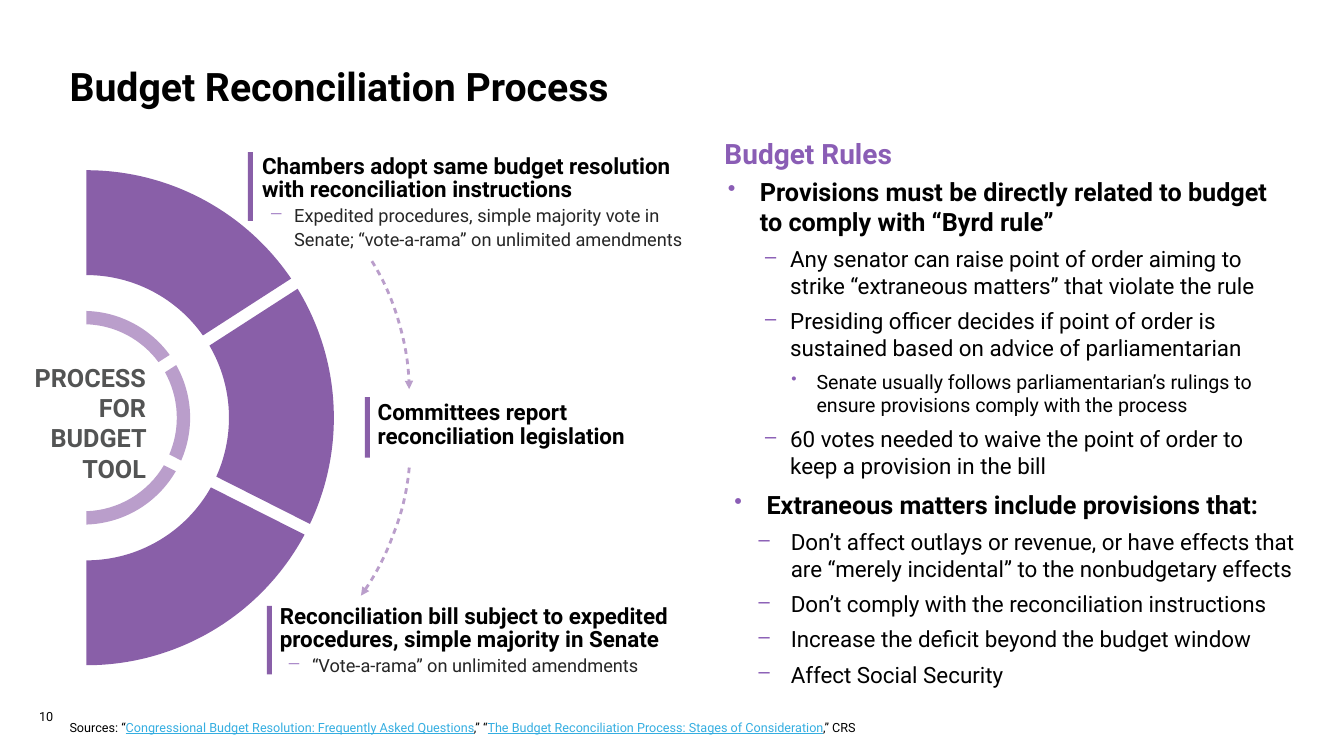
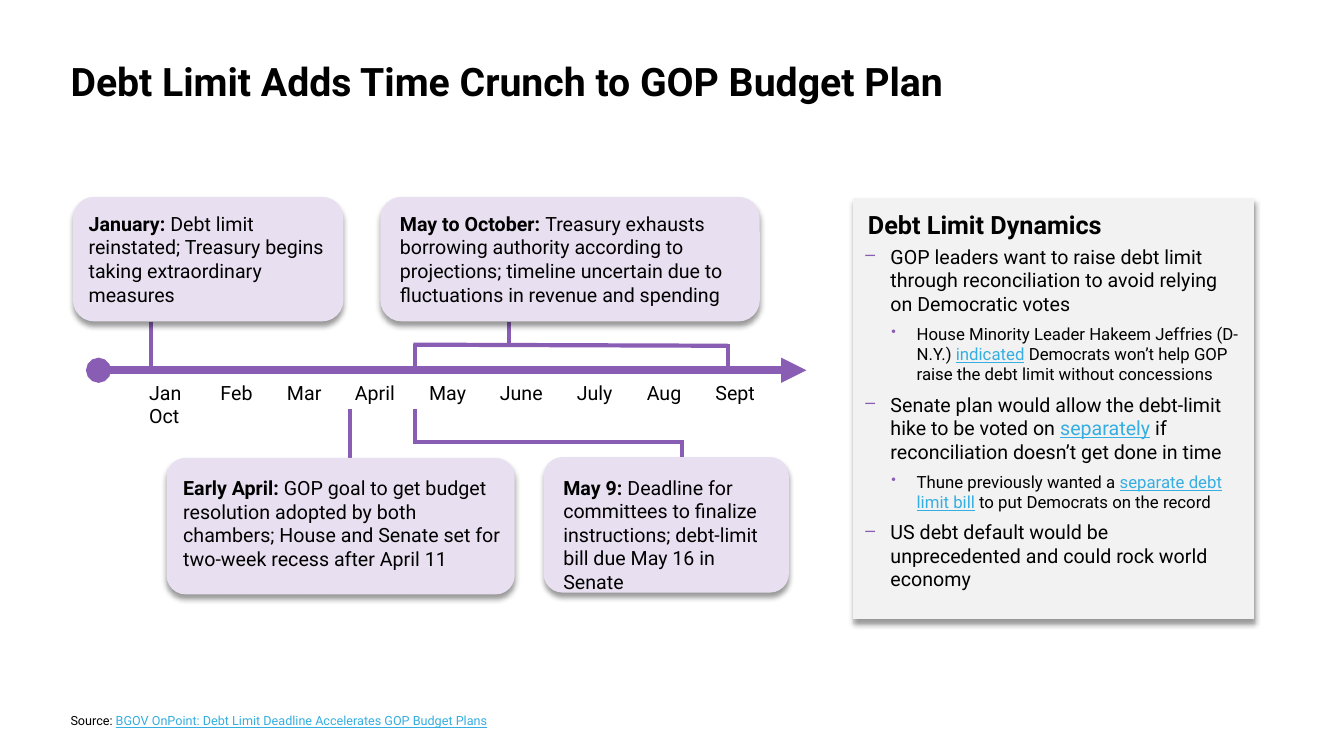
"""Build two budget slides: the reconciliation process and the debt limit timeline."""
import math
from dataclasses import dataclass
from typing import NamedTuple

from lxml import etree
from pptx import Presentation
from pptx import util as u
from pptx.dml.color import RGBColor
from pptx.enum import shapes, text
from pptx.oxml.ns import qn


@dataclass(frozen=True)
class Theme:
    font: str = "Roboto"
    ink: str = "000000"
    soft_ink: str = "262626"
    gray: str = "535454"
    accent: str = "8A5DB5"
    ring: str = "895FA8"
    light_ring: str = "BA9ECB"
    card: str = "E8DFF0"
    panel: str = "F2F2F2"
    link: str = "35AEE1"
    title: float = 28
    heading: float = 20
    lead: float = 18
    body: float = 16
    small: float = 14
    detail: float = 13
    minor: float = 12
    note: float = 9


THEME = Theme()
NO_INSETS = (0, 0, 0, 0)
SLIM_INSETS = (2.2, 2.2, 2.2, 2.2)
FULL_INSETS = (7.2, 3.6, 7.2, 3.6)


class Run(NamedTuple):
    text: str
    link: bool = False
    bold: bool = False


class Box(NamedTuple):
    left: float
    top: float
    width: float
    height: float


class Bullet(NamedTuple):
    char: str
    left: float
    hang: float
    percent: int = 100


class Callout(NamedTuple):
    bar: Box
    area: Box
    heading: str
    detail: str = ""


class Card(NamedTuple):
    outline: Box
    area: Box
    when: str
    event: str
    corner: float = 0.167


class Ring(NamedTuple):
    x: float
    y: float
    outer: float
    inner: float
    end_gap: float
    color: str


class Arrow(NamedTuple):
    start: tuple
    curves: list
    rotation: float = 0


RULE_LEAD = Bullet("•", 23, -23, 90)
RULE_ITEM = Bullet("–", 44.6, -18, 90)
RULE_NOTE = Bullet("•", 63.4, -18, 80)
MATTER_ITEM = Bullet("–", 40.3, -23, 90)
CALLOUT_ITEM = Bullet("−", 23, -18)
PANEL_ITEM = Bullet("–", 31.7, -18, 90)
PANEL_NOTE = Bullet("•", 50.4, -18, 80)

RINGS = [
    Ring(61.7, 298.4, 176.8, 101.9, 0, THEME.ring),
    Ring(59.5, 298.4, 76.3, 66.8, 2.2, THEME.light_ring),
]
RING_CUTS = [-90, -32.8, 26.8, 90]
HALF_GAP = 4.3

CALLOUTS = [
    Callout(Box(177.1, 108.7, 3.6, 49), Box(185, 108.3, 306.7, 90),
            "Chambers adopt same budget resolution with reconciliation instructions",
            "Expedited procedures, simple majority vote in Senate; “vote-a-rama” on unlimited amendments"),
    Callout(Box(260.6, 283.7, 3.6, 43.2), Box(267.6, 284.4, 205.2, 39),
            "Committees report reconciliation legislation"),
    Callout(Box(190.6, 432.7, 3.6, 49), Box(197.7, 429.8, 290.9, 55),
            "Reconciliation bill subject to expedited procedures, simple majority in Senate",
            "“Vote-a-rama” on unlimited amendments"),
]
ARROWS = [
    Arrow((260.2, 188.5), [((270.4, 201), (278.7, 215.2), (284.8, 229.7)),
                           ((291, 244.2), (295.8, 260.3), (297.8, 276))], 7),
    Arrow((292.3, 334), [((290.9, 349.9), (287.3, 365.8), (281.5, 380.2)),
                         ((275.8, 396), (267.8, 411.8), (257.8, 425.5))]),
]
RULES = [
    (RULE_LEAD, THEME.lead, "Provisions must be directly related to budget to comply with “Byrd rule”"),
    (RULE_ITEM, THEME.body, "Any senator can raise point of order aiming to strike “extraneous matters” that violate the rule"),
    (RULE_ITEM, THEME.body, "Presiding officer decides if point of order is sustained based on advice of parliamentarian"),
    (RULE_NOTE, THEME.small, "Senate usually follows parliamentarian’s rulings to ensure provisions comply with the process"),
    (RULE_ITEM, THEME.body, "60 votes needed to waive the point of order to keep a provision in the bill"),
]
MATTERS = [
    (RULE_LEAD, THEME.lead, "Extraneous matters include provisions that:"),
    (MATTER_ITEM, THEME.body, "Don’t affect outlays or revenue, or have effects that are “merely incidental” to the nonbudgetary effects"),
    (MATTER_ITEM, THEME.body, "Don’t comply with the reconciliation instructions"),
    (MATTER_ITEM, THEME.body, "Increase the deficit beyond the budget window"),
    (MATTER_ITEM, THEME.body, "Affect Social Security"),
]
CARDS = [
    Card(Box(52.6, 141.1, 192.2, 88), Box(56.2, 147.8, 186.5, 75), "January: ",
         "Debt limit reinstated; Treasury begins taking extraordinary measures"),
    Card(Box(272.2, 141.1, 270, 88), Box(278.6, 147.8, 257, 75), "May to October: ",
         "Treasury exhausts borrowing authority according to projections; "
         "timeline uncertain due to fluctuations in revenue and spending"),
    Card(Box(119.5, 327.6, 247.7, 96.5), Box(123.8, 336.7, 244.1, 75), "Early April: ",
         "GOP goal to get budget resolution adopted by both chambers; "
         "House and Senate set for two-week recess after April 11", 0.136),
    Card(Box(388.8, 327, 174.2, 95.8), Box(395.3, 336.2, 167.8, 75), "May 9: ",
         "Deadline for committees to finalize instructions; debt-limit bill due May 16 in Senate", 0.136),
]
AXIS_Y = 264.5
BRANCHES = [
    (108, 229.7, 108, AXIS_Y), (249.8, 292.3, 249.8, 327.6),
    (363.6, 229.7, 363.6, 247), (519.8, 247, 295.2, 246.2),
    (296.6, 245.5, 296.6, 262.8), (519.8, 245.5, 519.8, 262.8),
    (296.6, 292.3, 296.6, 316), (488.9, 316, 295.2, 316), (487.4, 316, 487.4, 339),
]
MONTHS = "Jan\tFeb\tMar\tApril\tMay\tJune\tJuly\tAug\tSept\tOct"
MONTH_STOPS = (51, 98.5, 147, 200, 250.5, 305.5, 355.5, 404.5, 455)
DYNAMICS = [
    (PANEL_ITEM, THEME.small, [Run("GOP leaders want to raise debt limit through reconciliation to avoid relying on Democratic votes")]),
    (PANEL_NOTE, THEME.minor, [Run("House Minority Leader Hakeem Jeffries (D-N.Y.) "), Run("indicated", True),
                               Run(" Democrats won’t help GOP raise the debt limit without concessions")]),
    (PANEL_ITEM, THEME.small, [Run("Senate plan would allow the debt-limit hike to be voted on "), Run("separately", True),
                               Run(" if reconciliation doesn’t get done in time")]),
    (PANEL_NOTE, THEME.minor, [Run("Thune previously wanted a "), Run("separate debt limit bill", True),
                               Run(" to put Democrats on the record")]),
    (PANEL_ITEM, THEME.small, [Run("US debt default would be unprecedented and could rock world economy")]),
]


def points(values) -> list:
    return [u.Pt(value) for value in values]


def add_xml(parent, tag: str, **attributes):
    return etree.SubElement(parent, qn(tag), {key: str(value) for key, value in attributes.items()})


def add_frame(slide, box: Box, insets=FULL_INSETS, anchor=text.MSO_ANCHOR.TOP):
    frame = slide.shapes.add_textbox(*points(box)).text_frame
    frame.word_wrap = True
    frame.vertical_anchor = anchor
    frame.margin_left, frame.margin_top, frame.margin_right, frame.margin_bottom = points(insets)
    return frame


def write(frame, content, *, size: float, color: str = THEME.ink, bold: bool = False, bullet: Bullet | None = None,
          after: float = 0, line: float | None = None, align=None, tabs=()) -> None:
    paragraph = frame.add_paragraph() if frame.paragraphs[0].runs else frame.paragraphs[0]
    paragraph.space_after = u.Pt(after)
    if line:
        paragraph.line_spacing = u.Pt(line)
    if align is not None:
        paragraph.alignment = align
    properties = paragraph._p.get_or_add_pPr()
    if bullet:
        properties.set("marL", str(u.Pt(bullet.left)))
        properties.set("indent", str(u.Pt(bullet.hang)))
        add_xml(add_xml(properties, "a:buClr"), "a:srgbClr", val=THEME.accent)
        add_xml(properties, "a:buSzPct", val=bullet.percent * 1000)
        add_xml(properties, "a:buChar", char=bullet.char)
    if tabs:
        tab_list = add_xml(properties, "a:tabLst")
        for stop in tabs:
            add_xml(tab_list, "a:tab", pos=u.Pt(stop), algn="l")
    for part in [Run(content)] if isinstance(content, str) else content:
        run = paragraph.add_run()
        run.text = part.text
        run.font.name, run.font.size = THEME.font, u.Pt(size)
        run.font.bold = bold or part.bold
        run.font.underline = part.link
        run.font.color.rgb = RGBColor.from_string(THEME.link if part.link else color)


def paint(shape, color: str) -> None:
    shape.shadow.inherit = False
    shape.fill.solid()
    shape.fill.fore_color.rgb = RGBColor.from_string(color)
    shape.line.fill.background()


def add_block(slide, kind, box: Box, color: str, raised: bool = False):
    shape = slide.shapes.add_shape(kind, *points(box))
    paint(shape, color)
    if raised:
        shape.line.color.rgb = RGBColor.from_string(color)
        shape.line.width = u.Pt(1)
        effects = shape.element.spPr.find(qn("a:effectLst"))
        outer = add_xml(effects, "a:outerShdw", blurRad=u.Pt(4), dist=u.Pt(3), dir=5400000, algn="t", rotWithShape=0)
        add_xml(add_xml(outer, "a:srgbClr", val=THEME.ink), "a:alpha", val=40000)
    return shape


def add_outline(slide, start: tuple, strokes: list, close: bool):
    builder = slide.shapes.build_freeform(*points(start))
    builder.add_line_segments([tuple(points(spot)) for stroke in strokes for spot in stroke], close=close)
    shape = builder.convert_to_shape()
    segments = iter(list(shape.element.iter(qn("a:lnTo"))))
    for stroke in strokes:
        first, *others = [next(segments) for _ in stroke]
        if others:
            curve = etree.Element(qn("a:cubicBezTo"))
            first.addprevious(curve)
            for segment in (first, *others):
                curve.append(segment[0])
                segment.getparent().remove(segment)
    return shape


def arc(ring: Ring, radius: float, first: float, last: float) -> list:
    half = (last - first) / 2
    pull = 4 / 3 * math.tan(half / 4)

    def spot(angle: float, lean: float = 0) -> tuple:
        return (ring.x + radius * (math.cos(angle) - lean * math.sin(angle)),
                ring.y + radius * (math.sin(angle) + lean * math.cos(angle)))

    return [(spot(angle, pull), spot(angle + half, -pull), spot(angle + half)) for angle in (first, first + half)]


def add_sector(slide, ring: Ring, index: int) -> None:
    gaps = [ring.end_gap, HALF_GAP, HALF_GAP, ring.end_gap]

    def limits(radius: float) -> list:
        return [math.radians(RING_CUTS[index + side]) + (1 - 2 * side) * math.asin(gaps[index + side] / radius)
                for side in (0, 1)]

    first, last = limits(ring.outer)
    inner_first, inner_last = limits(ring.inner)
    start = (ring.x + ring.outer * math.cos(first), ring.y + ring.outer * math.sin(first))
    turn = (ring.x + ring.inner * math.cos(inner_last), ring.y + ring.inner * math.sin(inner_last))
    strokes = [*arc(ring, ring.outer, first, last), (turn,), *arc(ring, ring.inner, inner_last, inner_first)]
    paint(add_outline(slide, start, strokes, True), ring.color)


def style_line(shape, color: str, width: float, head: str = "none", tail: str = "none", dashed: bool = False) -> None:
    shape.line.color.rgb = RGBColor.from_string(color)
    shape.line.width = u.Pt(width)
    line = shape.element.spPr.find(qn("a:ln"))
    if dashed:
        add_xml(add_xml(line, "a:custDash"), "a:ds", d=200000, sp=170000)
    add_xml(line, "a:headEnd", type=head)
    add_xml(line, "a:tailEnd", type=tail)


def add_curved_arrow(slide, arrow: Arrow) -> None:
    shape = add_outline(slide, arrow.start, arrow.curves, False)
    shape.shadow.inherit = False
    shape.fill.background()
    shape.rotation = arrow.rotation
    style_line(shape, THEME.light_ring, 2, tail="triangle", dashed=True)


def add_line(slide, ends, width: float, head: str = "none", tail: str = "none") -> None:
    connector = slide.shapes.add_connector(shapes.MSO_CONNECTOR.STRAIGHT, *points(ends))
    style_line(connector, THEME.accent, width, head, tail)
    add_xml(connector.element.spPr, "a:effectLst")


def add_slide(presentation, title: str, title_box: Box, sources: list, source_box: Box):
    slide = presentation.slides.add_slide(presentation.slide_layouts[6])
    write(add_frame(slide, title_box, NO_INSETS), title, size=THEME.title, bold=True, line=30)
    write(add_frame(slide, source_box, NO_INSETS, text.MSO_ANCHOR.BOTTOM), sources, size=THEME.note)
    return slide


def build_process(presentation) -> None:
    sources = [Run("Sources: “"), Run("Congressional Budget Resolution: Frequently Asked Questions", True), Run(",” “"),
               Run("The Budget Reconciliation Process: Stages of Consideration", True), Run(",” CRS")]
    slide = add_slide(presentation, "Budget Reconciliation Process", Box(49.7, 48.2, 862.6, 54),
                      sources, Box(49.7, 512.6, 571, 12.2))
    number = add_frame(slide, Box(28, 503.3, 21.6, 17.3), (0, 3.6, 7.2, 3.6), text.MSO_ANCHOR.MIDDLE)
    write(number, "10", size=THEME.note)
    for ring in RINGS:
        for index in range(len(RING_CUTS) - 1):
            add_sector(slide, ring, index)
    for arrow in ARROWS:
        add_curved_arrow(slide, arrow)
    for callout in CALLOUTS:
        add_block(slide, shapes.MSO_SHAPE.RECTANGLE, callout.bar, THEME.ring)
        frame = add_frame(slide, callout.area, SLIM_INSETS)
        write(frame, callout.heading, size=THEME.body, bold=True, line=17)
        if callout.detail:
            write(frame, callout.detail, size=THEME.detail, color=THEME.soft_ink, bullet=CALLOUT_ITEM, line=17)
    write(add_frame(slide, Box(4.3, 256.6, 102.2, 91.4), SLIM_INSETS), "PROCESS FOR BUDGET TOOL",
          size=THEME.lead, color=THEME.gray, bold=True, align=text.PP_ALIGN.RIGHT)
    write(add_frame(slide, Box(517.5, 97.2, 295.2, 31.7), NO_INSETS), "Budget Rules",
          size=THEME.heading, color=THEME.accent, bold=True)
    for box, items in ((Box(512.8, 122.4, 415.4, 219), RULES), (Box(517.5, 346, 415.4, 160), MATTERS)):
        frame = add_frame(slide, box)
        for bullet, size, words in items:
            write(frame, words, size=size, bold=bullet is RULE_LEAD, bullet=bullet, after=6)


def build_timeline(presentation) -> None:
    sources = [Run("Source: "), Run("BGOV OnPoint: Debt Limit Deadline Accelerates GOP Budget Plans", True)]
    slide = add_slide(presentation, "Debt Limit Adds Time Crunch to GOP Budget Plan", Box(50.4, 44.6, 862.6, 54),
                      sources, Box(50.4, 491.4, 548, 28.8))
    for branch in BRANCHES:
        add_line(slide, branch, 3)
    add_line(slide, (70.4, AXIS_Y, 576, AXIS_Y), 6, "oval", "triangle")
    write(add_frame(slide, Box(99.4, 268.4, 476.6, 24.5)), MONTHS, size=THEME.small, tabs=MONTH_STOPS)
    for card in CARDS:
        shape = add_block(slide, shapes.MSO_SHAPE.ROUNDED_RECTANGLE, card.outline, THEME.card, True)
        shape.adjustments[0] = card.corner
        write(add_frame(slide, card.area), [Run(card.when, bold=True), Run(card.event)], size=THEME.small)
    add_block(slide, shapes.MSO_SHAPE.RECTANGLE, Box(609.8, 141.8, 285.8, 300.2), THEME.panel, True)
    write(add_frame(slide, Box(620, 141.1, 275.8, 29.5), NO_INSETS), "Debt Limit Dynamics",
          size=THEME.lead, bold=True, line=30)
    frame = add_frame(slide, Box(597.3, 171.2, 298, 196.6))
    for bullet, size, runs in DYNAMICS:
        write(frame, runs, size=size, bullet=bullet, after=6)


def main() -> None:
    presentation = Presentation()
    presentation.slide_width, presentation.slide_height = u.Pt(960), u.Pt(540)
    build_process(presentation)
    build_timeline(presentation)
    presentation.save("out.pptx")


if __name__ == "__main__":
    main()
